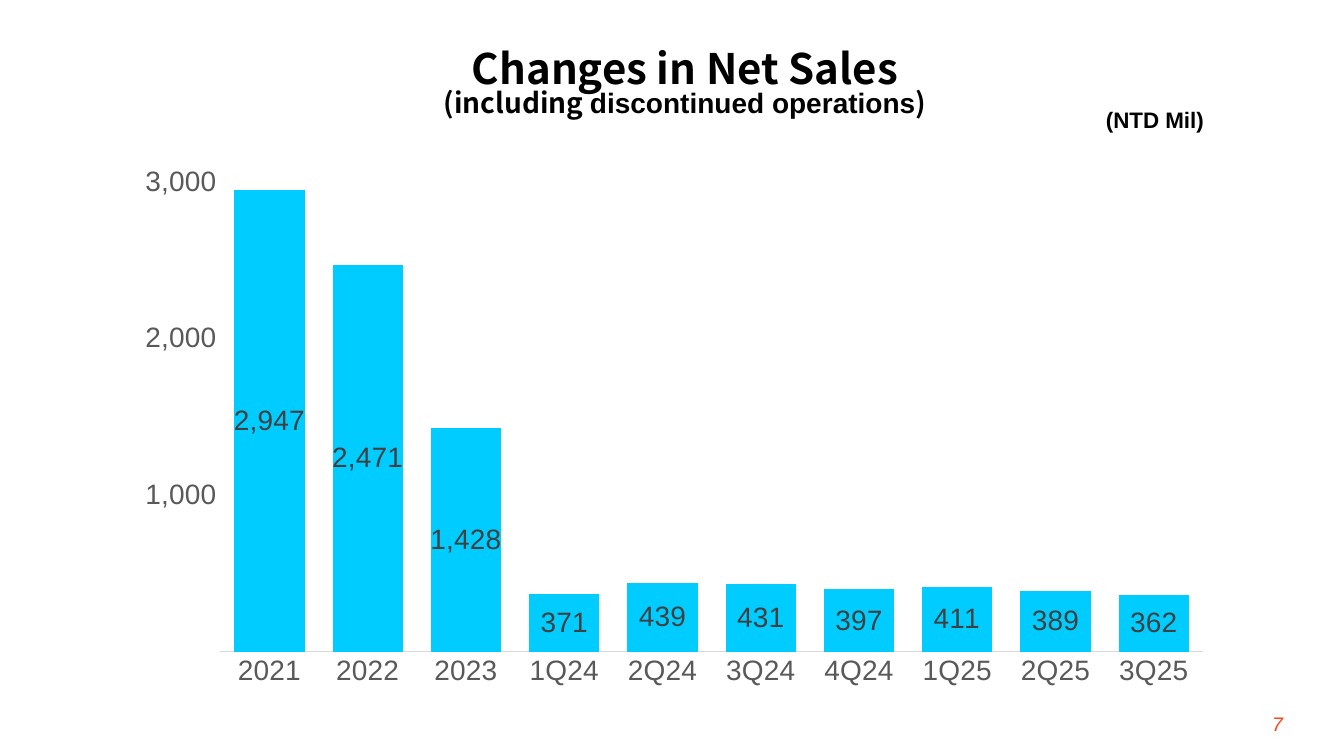
import pptx
import pptx.chart.data
import pptx.dml.color
import pptx.enum.chart
import pptx.enum.text
import pptx.oxml
import pptx.oxml.ns
import pptx.util

THEME = {
    "latin": "Arial", "heading": "Noto Sans CJK SC",
    "black": "000000", "page": "FA461E", "bar": "00CCFF",
    "axis_text": "595959", "axis_line": "D9D9D9", "label": "404040",
    "title": 30, "body": 20, "unit": 16, "page_size": 14,
}
PX = 914400 / 100.8
NUMBER_FORMAT = r"#,###,;[Red]\(#,\)"
ALIGN = pptx.enum.text.PP_ALIGN


def set_font(font, size, color, **values):
    values = {"name": THEME["latin"], "size": pptx.util.Pt(THEME[size]), **values}
    for key, value in values.items():
        setattr(font, key, value)
    font.color.rgb = pptx.dml.color.RGBColor.from_string(THEME[color])


def add_text(slide, box, align, wrap, inset, spacing, lines):
    shape = slide.shapes.add_textbox(*[round(length * PX) for length in box])
    frame = shape.text_frame
    frame.word_wrap = wrap
    frame.margin_top = frame.margin_bottom = round(inset * PX)
    paragraph = frame.paragraphs[0]
    paragraph.alignment = align
    paragraph.line_spacing = spacing
    for index, line in enumerate(lines):
        if index:
            paragraph.add_line_break()
        for text, size, color, values in line:
            run = paragraph.add_run()
            run.text = text
            set_font(run.font, size, color, **values)


presentation = pptx.Presentation()
presentation.slide_width = round(1344 * PX)
presentation.slide_height = round(756 * PX)
slide = presentation.slides.add_slide(presentation.slide_layouts[6])

bold = {"bold": True}
heading = {"bold": True, "name": THEME["heading"]}
add_text(slide, (1095, 101, 120, 37), ALIGN.CENTER, False, 5, 1.0,
         [[("(NTD Mil)", "unit", "black", bold)]])
add_text(slide, (407, 47, 556, 54), ALIGN.CENTER, True, 5, 0.8, [
    [("Changes in Net Sales", "title", "black", heading)],
    [("(including ", "body", "black", heading),
     ("discontinued operations", "body", "black", bold),
     (")", "body", "black", heading)],
])
add_text(slide, (1217, 707, 76, 40), ALIGN.RIGHT, True, 5, 1.0,
         [[("7", "page_size", "page", {"italic": True})]])

sales = {
    "2021": 2947, "2022": 2471, "2023": 1428, "1Q24": 371, "2Q24": 439,
    "3Q24": 431, "4Q24": 397, "1Q25": 411, "2Q25": 389, "3Q25": 362,
}
chart_data = pptx.chart.data.CategoryChartData(number_format=NUMBER_FORMAT)
chart_data.categories = list(sales)
chart_data.add_series("Series 1", [value * 1000 for value in sales.values()])
chart = slide.shapes.add_chart(
    pptx.enum.chart.XL_CHART_TYPE.COLUMN_STACKED,
    *[round(length * PX) for length in (121, 155, 1104, 540)], chart_data).chart
chart.has_legend = False
chart.has_title = False
set_font(chart.font, "body", "black")

plot = chart.plots[0]
plot.gap_width = 40
plot.overlap = 100
plot.vary_by_categories = False
bars = plot.series[0].format
bars.fill.solid()
bars.fill.fore_color.rgb = pptx.dml.color.RGBColor.from_string(THEME["bar"])
bars.line.fill.background()

plot.has_data_labels = True
labels = plot.data_labels
label_format = {
    "show_value": True, "number_format": NUMBER_FORMAT,
    "number_format_is_linked": False,
    "position": pptx.enum.chart.XL_LABEL_POSITION.CENTER,
}
for key, value in label_format.items():
    setattr(labels, key, value)
set_font(labels.font, "body", "label")

for axis in (chart.category_axis, chart.value_axis):
    axis.has_major_gridlines = False
    axis.major_tick_mark = pptx.enum.chart.XL_TICK_MARK.NONE
    axis.minor_tick_mark = pptx.enum.chart.XL_TICK_MARK.NONE
    set_font(axis.tick_labels.font, "body", "axis_text")
category_line = chart.category_axis.format.line
category_line.color.rgb = pptx.dml.color.RGBColor.from_string(THEME["axis_line"])
category_line.width = pptx.util.Pt(1)
value_axis = chart.value_axis
value_axis.minimum_scale = 0
value_axis.maximum_scale = 3000000
value_axis.major_unit = 1000000
value_axis.format.line.fill.background()
value_axis.tick_labels.number_format = NUMBER_FORMAT
value_axis.tick_labels.number_format_is_linked = False

plot_area = chart.element.find(".//" + pptx.oxml.ns.qn("c:plotArea"))
for layout in plot_area.findall(pptx.oxml.ns.qn("c:layout")):
    plot_area.remove(layout)
plot_area.insert(0, pptx.oxml.parse_xml(
    f'<c:layout {pptx.oxml.ns.nsdecls("c")}><c:manualLayout>'
    '<c:layoutTarget val="inner"/><c:xMode val="edge"/><c:yMode val="edge"/>'
    '<c:x val="0.09"/><c:y val="0.05"/><c:w val="0.89"/><c:h val="0.87"/>'
    '</c:manualLayout></c:layout>'))

presentation.save("out.pptx")
